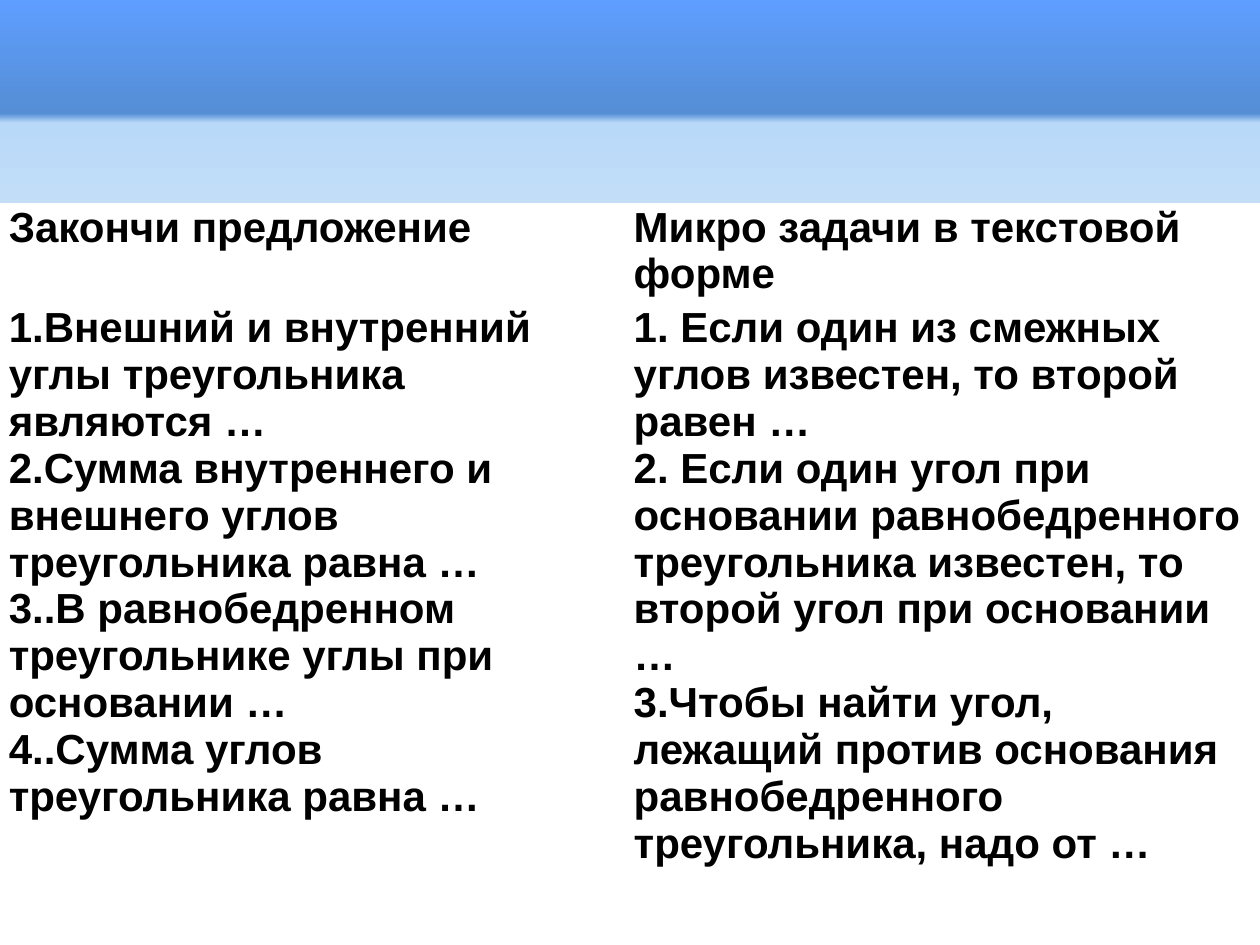
from lxml import etree
from pptx import Presentation
from pptx.dml.color import RGBColor
from pptx.oxml.ns import qn
from pptx.util import Inches, Pt

COLORS = {
    "text": "000000",
    "cell": "FFFFFF",
    "sky": "5E9EFF",
    "steel": "558ED5",
    "pale": "B9D9F9",
    "mist": "F2F2F2",
    "white": "FFFFFF",
}
GRADIENT = [(0, "sky"), (12, "steel"), (13, "pale"), (58, "mist"), (100, "white")]
FONT_FORMAT = {"name": "Arial", "size": Pt(24), "bold": True}
CELL_FORMAT = {
    "margin_left": Inches(0.07),
    "margin_right": Inches(0.07),
    "margin_top": 0,
    "margin_bottom": 0,
}
COLUMN_WIDTHS = [4.96, 5.04]
ROW_HEIGHTS = [0.8, 5.07]
ROW_BORDERS = [
    {"lnL": 1, "lnR": 1, "lnT": 1, "lnB": 3},
    {"lnL": 1, "lnR": 1, "lnT": 3, "lnB": 1},
]
TASKS = [
    [["Закончи предложение"], ["Микро задачи в текстовой форме"]],
    [
        [
            "1.Внешний и внутренний углы треугольника являются …",
            "2.Сумма внутреннего и внешнего углов треугольника равна …",
            "3..В равнобедренном треугольнике углы при основании …",
            "4..Сумма углов треугольника равна …",
        ],
        [
            "1. Если один из смежных углов известен, то второй равен …",
            "2. Если один угол при основании равнобедренного треугольника "
            "известен, то второй угол при основании …",
            "3.Чтобы найти угол, лежащий против основания равнобедренного "
            "треугольника, надо от …",
        ],
    ],
]


def apply_format(target, values):
    for name, value in values.items():
        setattr(target, name, value)


def add_color(parent, color):
    etree.SubElement(parent, qn("a:srgbClr"), val=COLORS[color])


class SlideBuilder:
    """Holds the style and the current slide, and adds each kind of element."""

    def __init__(self, slide):
        self.slide = slide

    def background(self, stops, angle):
        self.slide.background.fill.gradient()
        gradient = self.slide.element.find(".//" + qn("a:gradFill"))
        for child in list(gradient):
            gradient.remove(child)
        stop_list = etree.SubElement(gradient, qn("a:gsLst"))
        for position, color in stops:
            stop = etree.SubElement(stop_list, qn("a:gs"), pos=str(position * 1000))
            add_color(stop, color)
        etree.SubElement(gradient, qn("a:lin"), ang=str(angle * 60000), scaled="0")

    def table(self, left, top, contents):
        shape = self.slide.shapes.add_table(
            len(ROW_HEIGHTS), len(COLUMN_WIDTHS), Inches(left), Inches(top),
            Inches(sum(COLUMN_WIDTHS)), Inches(sum(ROW_HEIGHTS)))
        table = shape.table
        for column, width in zip(table.columns, COLUMN_WIDTHS):
            column.width = Inches(width)
        for row, height, borders, texts in zip(
                table.rows, ROW_HEIGHTS, ROW_BORDERS, contents):
            row.height = Inches(height)
            for cell, lines in zip(row.cells, texts):
                self.cell(cell, lines, borders)

    def cell(self, cell, lines, borders):
        apply_format(cell, CELL_FORMAT)
        self.borders(cell, borders)
        cell.fill.solid()
        cell.fill.fore_color.rgb = RGBColor.from_string(COLORS["cell"])
        cell.text = "\n".join(lines)
        for paragraph in cell.text_frame.paragraphs:
            for run in paragraph.runs:
                apply_format(run.font, FONT_FORMAT)
                run.font.color.rgb = RGBColor.from_string(COLORS["text"])

    def borders(self, cell, widths):
        properties = cell._tc.get_or_add_tcPr()
        for side, width in widths.items():
            line = etree.SubElement(properties, qn("a:" + side), w=str(Pt(width)))
            add_color(etree.SubElement(line, qn("a:solidFill")), "white")


def main():
    presentation = Presentation()
    presentation.slide_width = Inches(10)
    presentation.slide_height = Inches(7.5)
    slide = presentation.slides.add_slide(presentation.slide_layouts[6])
    builder = SlideBuilder(slide)
    builder.background(GRADIENT, 90)
    builder.table(0, 1.62, TASKS)
    presentation.save("out.pptx")


if __name__ == "__main__":
    main()
